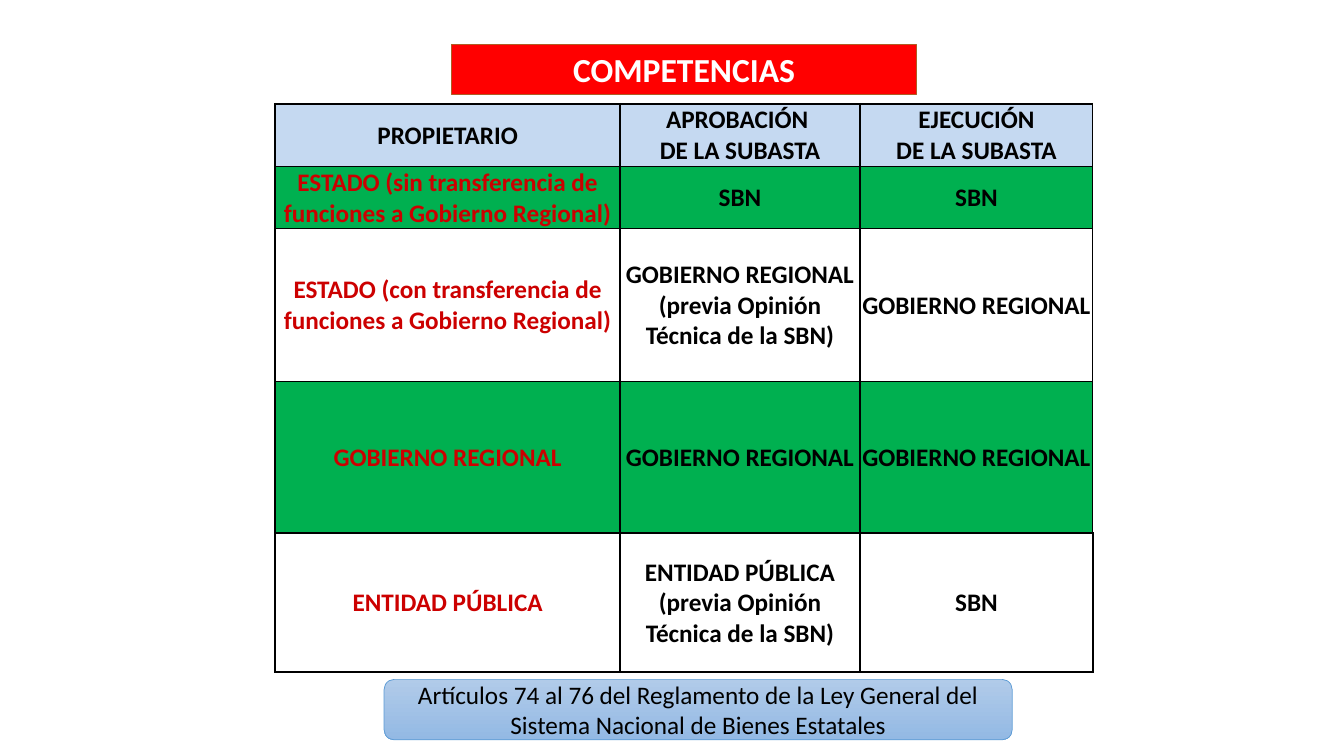
"""Build the slide on who approves and who runs public auctions."""
from lxml import etree
from pptx import Presentation
from pptx.dml.color import RGBColor
from pptx.enum.shapes import MSO_SHAPE
from pptx.enum.text import MSO_ANCHOR, PP_ALIGN
from pptx.oxml.ns import qn
from pptx.util import Emu, Pt

PX = 9144
CENTER = PP_ALIGN.CENTER
MIDDLE = MSO_ANCHOR.MIDDLE
RECTANGLE = MSO_SHAPE.RECTANGLE
ROUNDED = MSO_SHAPE.ROUNDED_RECTANGLE

THEME = {
    "font": "Calibri", "title_size": 24, "body_size": 18,
    "black": "000000", "white": "FFFFFF", "red": "FF0000", "owner": "CC0000",
    "title_line": "AF5C24", "header": "C5D9F1", "green": "00B050",
    "note_top": "B1CBE9", "note_bottom": "93B9E4", "note_line": "5B9BD5",
    "thin": 1, "heavy": 1.5,
}
COLUMNS = [342, 238, 231]
ROWS = [61, 61, 151, 151, 138]
ROW_FILLS = ["header", "green", "white", "green", "white"]
CELLS = [
    ["PROPIETARIO", "APROBACIÓN \nDE LA SUBASTA", "EJECUCIÓN\nDE LA SUBASTA"],
    ["ESTADO (sin transferencia de funciones a Gobierno Regional)", "SBN", "SBN"],
    ["ESTADO (con transferencia de funciones a Gobierno Regional)",
     "GOBIERNO REGIONAL\n(previa Opinión Técnica de la SBN)", "GOBIERNO REGIONAL"],
    ["GOBIERNO REGIONAL"] * 3,
    ["ENTIDAD PÚBLICA", "ENTIDAD PÚBLICA\n(previa Opinión Técnica de la SBN)", "SBN"],
]
CELL_FORMAT = {
    "vertical_anchor": MIDDLE, "margin_left": PX, "margin_right": PX,
    "margin_top": PX, "margin_bottom": 0,
}


def write(frame, text, size, color, bold):
    frame.word_wrap = True
    frame.text = text
    font_format = {"name": THEME["font"], "size": Pt(THEME[size]), "bold": bold}
    for para in frame.paragraphs:
        para.alignment = CENTER
        for span in para.runs:
            for key, value in font_format.items():
                setattr(span.font, key, value)
            span.font.color.rgb = RGBColor.from_string(THEME[color])


def add_box(kind, bounds, line_color, line_width):
    box = page.shapes.add_shape(kind, *[Emu(value * PX) for value in bounds])
    box.shadow.inherit = False
    box.line.color.rgb = RGBColor.from_string(THEME[line_color])
    box.line.width = Pt(line_width)
    box.text_frame.vertical_anchor = MIDDLE
    return box


deck = Presentation()
deck.slide_width = Emu(1333 * PX)
deck.slide_height = Emu(750 * PX)
page = deck.slides.add_slide(deck.slide_layouts[6])

note = add_box(ROUNDED, (381, 674, 623, 60), "note_line", 0.5)
note.fill.gradient()
note.fill.gradient_angle = 270
for stop, color in zip(note.fill.gradient_stops, ["note_top", "note_bottom"]):
    stop.color.rgb = RGBColor.from_string(THEME[color])
write(note.text_frame,
      "Artículos 74 al 76 del Reglamento de la Ley General del\n"
      "Sistema Nacional de Bienes Estatales", "body_size", "black", False)

title = add_box(RECTANGLE, (448, 44, 461, 50), "title_line", 1)
title.fill.solid()
title.fill.fore_color.rgb = RGBColor.from_string(THEME["red"])
write(title.text_frame, "COMPETENCIAS", "title_size", "white", True)

bounds = (273, 103, sum(COLUMNS), sum(ROWS))
table = page.shapes.add_table(
    len(ROWS), len(COLUMNS), *[Emu(value * PX) for value in bounds]).table
table.first_row = False
table.horz_banding = False
for column, width in zip(table.columns, COLUMNS):
    column.width = Emu(width * PX)
for row, height in zip(table.rows, ROWS):
    row.height = Emu(height * PX)

last = len(ROWS) - 1
for row_index, texts in enumerate(CELLS):
    for column_index, text in enumerate(texts):
        cell = table.cell(row_index, column_index)
        for key, value in CELL_FORMAT.items():
            setattr(cell, key, value)
        is_owner = column_index == 0 and row_index > 0
        write(cell.text_frame, text, "body_size", "owner" if is_owner else "black", True)
        heavy_sides = {
            "L": column_index == 0 or row_index == last,
            "R": row_index == last,
            "T": row_index in (0, last),
            "B": row_index >= last - 1,
        }
        properties = cell._tc.get_or_add_tcPr()
        for side, is_heavy in heavy_sides.items():
            weight = THEME["heavy" if is_heavy else "thin"]
            border = etree.SubElement(properties, qn(f"a:ln{side}"), w=str(Pt(weight)))
            paint = etree.SubElement(border, qn("a:solidFill"))
            etree.SubElement(paint, qn("a:srgbClr"), val=THEME["black"])
        cell.fill.solid()
        cell.fill.fore_color.rgb = RGBColor.from_string(THEME[ROW_FILLS[row_index]])

deck.save("out.pptx")
